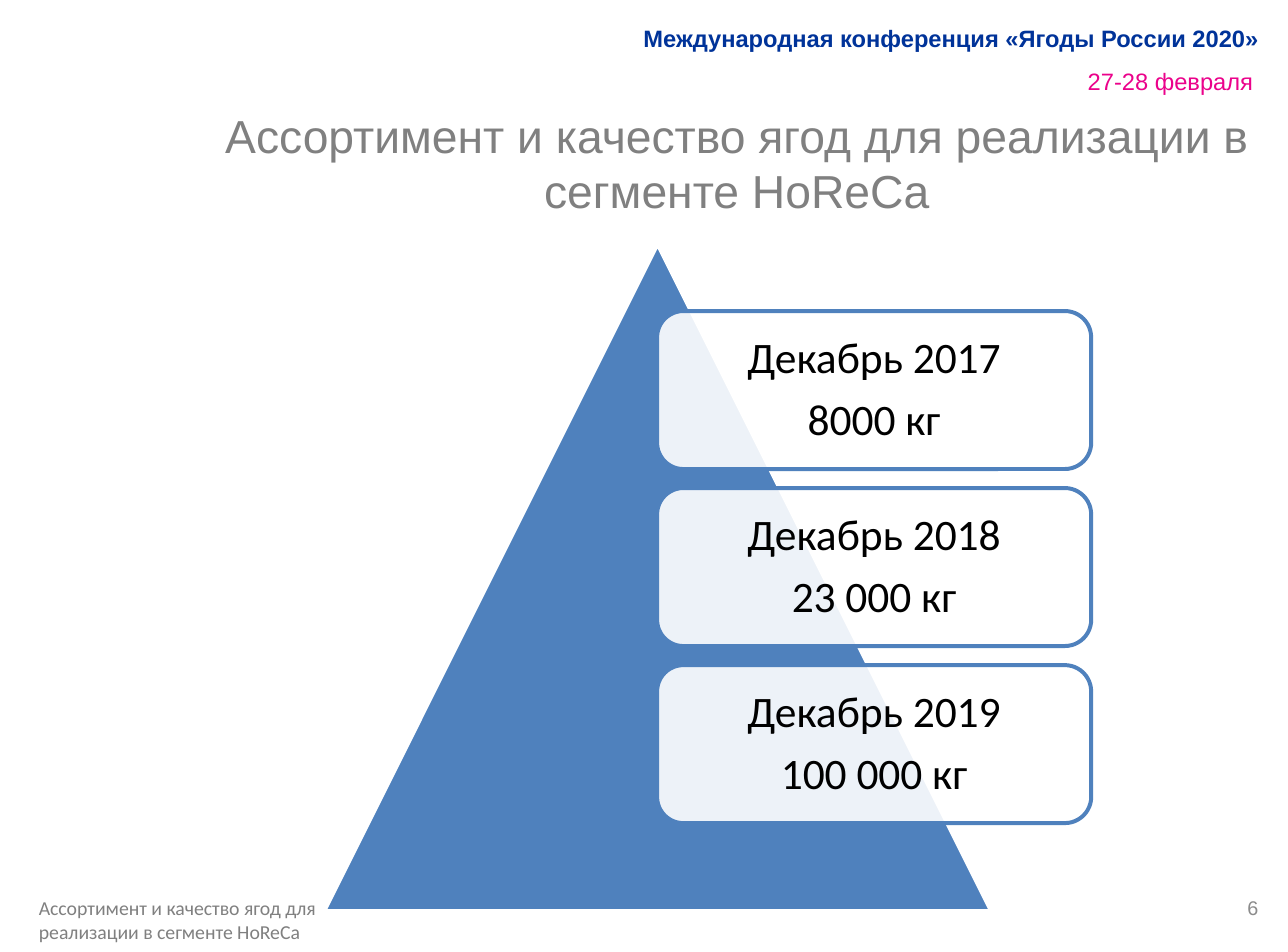
"""Builds the slide on berry volumes for the HoReCa segment."""
from lxml import etree
from pptx import Presentation
from pptx import util as u
from pptx.dml.color import RGBColor
from pptx.enum import shapes, text
from pptx.oxml.ns import qn

PX = 6430
COLORS = {"white": "FFFFFF", "blue": "4F81BD", "navy": "003399", "pink": "EB028B",
          "gray": "808080", "number": "8C8C8C", "black": "000000"}
TOPIC = "Ассортимент и качество ягод для реализации в сегменте HoReCa"
LEFT, CENTER, RIGHT = text.PP_ALIGN.LEFT, text.PP_ALIGN.CENTER, text.PP_ALIGN.RIGHT
TOP, MIDDLE = text.MSO_ANCHOR.TOP, text.MSO_ANCHOR.MIDDLE


def write(box, lines, size, color, font="Arial", bold=False, align=LEFT,
          anchor=TOP, spacing=None, gap=0, insets=(11, 6)):
    frame = box.text_frame
    frame.word_wrap = True
    frame.vertical_anchor = anchor
    frame.margin_left = frame.margin_right = insets[0] * PX
    frame.margin_top = frame.margin_bottom = insets[1] * PX
    for index, line in enumerate(lines):
        para = frame.add_paragraph() if index else frame.paragraphs[0]
        para.alignment = align
        para.line_spacing = spacing
        if index:
            para.space_before = u.Pt(gap)
        span = para.add_run()
        span.text = line
        span.font.name = font
        span.font.size = u.Pt(size)
        span.font.bold = bold
        span.font.color.rgb = RGBColor.from_string(COLORS[color])


def add_figure(kind, place, fill, line):
    figure = page.shapes.add_shape(kind, *[n * PX for n in place])
    figure.shadow.inherit = False
    figure.fill.solid()
    figure.fill.fore_color.rgb = RGBColor.from_string(COLORS[fill])
    figure.line.color.rgb = RGBColor.from_string(COLORS[line])
    figure.line.width = u.Pt(2)
    return figure


deck = Presentation()
deck.slide_width, deck.slide_height = u.Cm(23), u.Cm(17)
page = deck.slides.add_slide(deck.slide_layouts[6])

labels = [
    ((1035, 49, 229, 53), "27-28 февраля",
     dict(size=12, color="pink", align=RIGHT, spacing=u.Pt(20.4))),
    ((602, 11, 668, 55), "Международная конференция «Ягоды России 2020»",
     dict(size=12, color="navy", bold=True, align=RIGHT, anchor=MIDDLE)),
    ((208, 101, 1057, 111), TOPIC, dict(size=23.4, color="gray", align=CENTER)),
    ((969, 882, 300, 51), "6",
     dict(size=10, color="number", align=RIGHT, anchor=MIDDLE)),
    ((28, 889, 343, 60), TOPIC,
     dict(size=10, color="gray", font="Calibri", spacing=u.Pt(12.2))),
]
for place, label, style in labels:
    box = page.shapes.add_textbox(*[n * PX for n in place])
    write(box, [label], **style)

add_figure(shapes.MSO_SHAPE.ISOSCELES_TRIANGLE, (324, 244, 667, 667), "blue", "white")

volumes = [("Декабрь 2017", "8000 кг"),
           ("Декабрь 2018", "23 000 кг"),
           ("Декабрь 2019", "100 000 кг")]
for row, volume in enumerate(volumes):
    card = add_figure(shapes.MSO_SHAPE.ROUNDED_RECTANGLE,
                      (657, 311 + 177 * row, 434, 158), "white", "blue")
    fill_color = card.fill._xPr.find(qn("a:solidFill"))[0]
    etree.SubElement(fill_color, qn("a:alpha"), val="90000")
    write(card, volume, size=22, color="black", font="Calibri", align=CENTER,
          anchor=MIDDLE, spacing=0.9, gap=7.7, insets=(13, 13))

deck.save("out.pptx")
